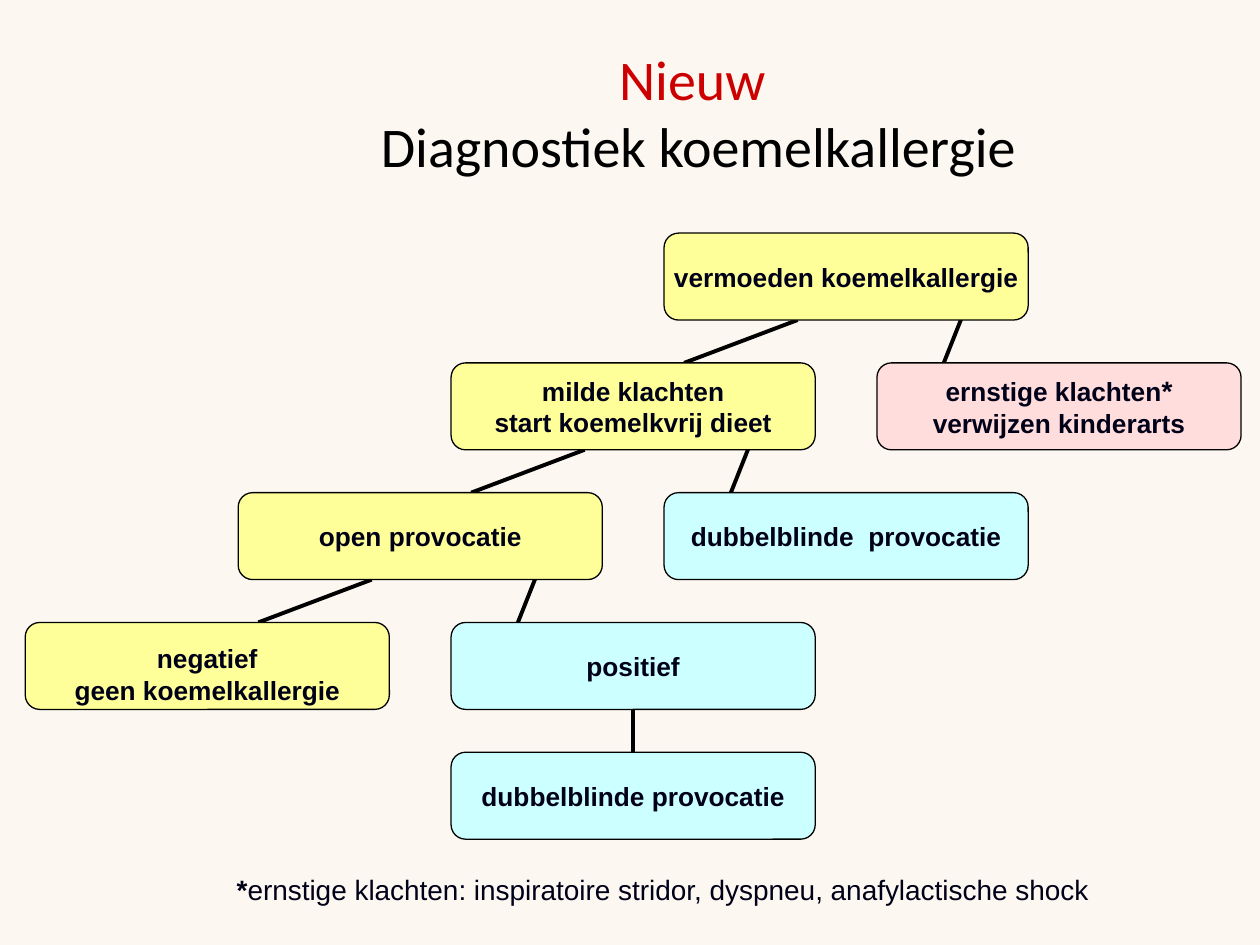
from lxml.etree import SubElement
from pptx import Presentation
from pptx.dml.color import RGBColor
from pptx.enum.shapes import MSO_CONNECTOR, MSO_SHAPE
from pptx.enum.text import MSO_ANCHOR, MSO_AUTO_SIZE, PP_ALIGN
from pptx.oxml.ns import qn
from pptx.util import Inches, Pt

CREAM = RGBColor(0xFC, 0xF8, 0xF1)
BLACK = RGBColor(0x00, 0x00, 0x00)
NAVY = RGBColor(0x00, 0x00, 0x18)
RED = RGBColor(0xCC, 0x00, 0x00)
YELLOW = RGBColor(0xFF, 0xFF, 0x99)
PINK = RGBColor(0xFF, 0xDD, 0xDD)
CYAN = RGBColor(0xCC, 0xFF, 0xFF)

COLUMN_STEP, ROW_STEP = 1.69, 1.03
NODE_WIDTH, NODE_HEIGHT = 2.89, 0.69
NODE_FONT = {"name": "Arial", "size": Pt(15), "bold": True}

NODES = {
    "suspected": (3, 0, YELLOW, ["vermoeden koemelkallergie"]),
    "mild": (2, 1, YELLOW, ["milde klachten", "start koemelkvrij dieet"]),
    "severe": (4, 1, PINK, ["ernstige klachten*", "verwijzen kinderarts"]),
    "open": (1, 2, YELLOW, ["open provocatie"]),
    "blind": (3, 2, CYAN, ["dubbelblinde  provocatie"]),
    "negative": (0, 3, YELLOW, ["negatief", "geen koemelkallergie"]),
    "positive": (2, 3, CYAN, ["positief"]),
    "confirm": (2, 4, CYAN, ["dubbelblinde provocatie"]),
}
TOP_INSETS = {"negative": 0.13}

BRANCH_ENDS = {
    "left": ((1.06, NODE_HEIGHT), (1.85, 0)),
    "right": ((2.53, 0.25), (0.36, 0.43)),
    "down": ((NODE_WIDTH / 2, NODE_HEIGHT), (NODE_WIDTH / 2, 0)),
}
BRANCHES = [
    ("suspected", "mild", "left"),
    ("suspected", "severe", "right"),
    ("mild", "open", "left"),
    ("mild", "blind", "right"),
    ("open", "negative", "left"),
    ("open", "positive", "right"),
    ("positive", "confirm", "down"),
]


def add_span(para, text, color, font):
    span = para.add_run()
    span.text = text
    span.font.color.rgb = color
    for name, value in font.items():
        setattr(span.font, name, value)


def set_frame(frame, **values):
    for name, value in values.items():
        setattr(frame, name, value)


def place_title(page, left, top, width, height):
    title = page.shapes.title
    title.left, title.top = Inches(left), Inches(top)
    title.width, title.height = Inches(width), Inches(height)
    set_frame(title.text_frame, word_wrap=True, auto_size=MSO_AUTO_SIZE.NONE,
              vertical_anchor=MSO_ANCHOR.TOP)
    para = title.text_frame.paragraphs[0]
    para.alignment = PP_ALIGN.CENTER
    font = {"name": "Calibri", "size": Pt(32)}
    add_span(para, "Nieuw ", RED, font)
    para.add_line_break()
    add_span(para, "Diagnostiek koemelkallergie", BLACK, font)


def add_node(page, left, top, color, lines, top_inset):
    node = page.shapes.add_shape(
        MSO_SHAPE.ROUNDED_RECTANGLE, Inches(left), Inches(top),
        Inches(NODE_WIDTH), Inches(NODE_HEIGHT))
    node.shadow.inherit = False
    node.fill.solid()
    node.fill.fore_color.rgb = color
    node.line.color.rgb = BLACK
    node.line.width = Pt(0.75)
    frame = node.text_frame
    set_frame(frame, word_wrap=True, vertical_anchor=MSO_ANCHOR.MIDDLE,
              margin_left=0, margin_right=0, margin_bottom=0,
              margin_top=Inches(top_inset))
    for index, line in enumerate(lines):
        para = frame.add_paragraph() if index else frame.paragraphs[0]
        para.alignment = PP_ALIGN.CENTER
        words, star, _ = line.partition("*")
        add_span(para, words, NAVY, NODE_FONT)
        if star:
            add_span(para, star, NAVY, NODE_FONT | {"size": Pt(16)})


def add_branch(page, start, end):
    branch = page.shapes.add_connector(
        MSO_CONNECTOR.STRAIGHT, *map(Inches, start + end))
    branch.line.color.rgb = BLACK
    branch.line.width = Pt(2.25)
    SubElement(branch.element.spPr, qn("a:effectLst"))


def build_tree(page, left, top):
    corners = {
        name: (left + column * COLUMN_STEP, top + row * ROW_STEP)
        for name, (column, row, _, _) in NODES.items()
    }
    for parent, child, direction in BRANCHES:
        start, end = (
            (corners[name][0] + x, corners[name][1] + y)
            for name, (x, y) in zip((parent, child), BRANCH_ENDS[direction]))
        add_branch(page, start, end)
    for name, (_, _, color, lines) in NODES.items():
        add_node(page, *corners[name], color, lines, TOP_INSETS.get(name, 0))


def add_footnote(page, left, top, width, height):
    box = page.shapes.add_textbox(*map(Inches, (left, top, width, height)))
    set_frame(box.text_frame, word_wrap=True, margin_right=0)
    para = box.text_frame.paragraphs[0]
    font = {"name": "Arial", "size": Pt(16)}
    add_span(para, "*", NAVY, font | {"bold": True})
    add_span(para, "ernstige klachten: inspiratoire stridor, dyspneu, "
             "anafylactische shock", NAVY, font)


def main():
    deck = Presentation()
    deck.slide_width, deck.slide_height = Inches(10), Inches(7.5)
    page = deck.slides.add_slide(deck.slide_layouts[5])
    page.background.fill.solid()
    page.background.fill.fore_color.rgb = CREAM
    place_title(page, 1.64, 0.3, 7.81, 1.2)
    build_tree(page, 0.2, 1.85)
    add_footnote(page, 1.78, 6.88, 6.99, 0.37)
    deck.save("out.pptx")


if __name__ == "__main__":
    main()
